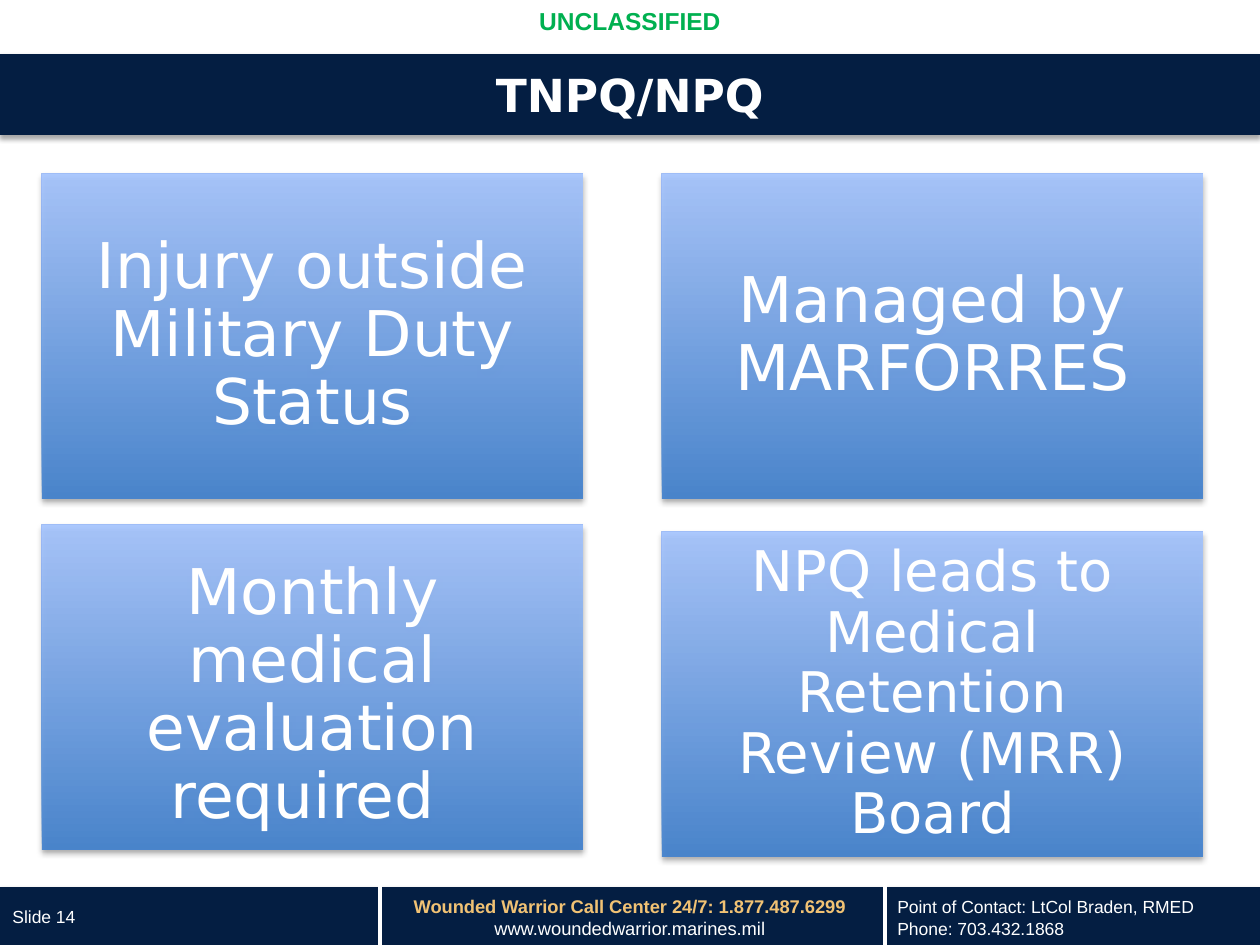
from dataclasses import dataclass

from lxml import etree
from pptx import Presentation, util as u
from pptx.dml.color import RGBColor
from pptx.enum import shapes, text
from pptx.oxml.ns import qn

EMU_PER_PX = 914400 / 126
LEFT, CENTER = text.PP_ALIGN.LEFT, text.PP_ALIGN.CENTER
TOP, MIDDLE = text.MSO_ANCHOR.TOP, text.MSO_ANCHOR.MIDDLE


def px(n):
    return u.Emu(round(n * EMU_PER_PX))


@dataclass(frozen=True)
class Theme:
    navy: str = "041E42"
    white: str = "FFFFFF"
    gold: str = "F1C274"
    green: str = "00B050"
    tile_bottom: str = "3F80CE"
    tile_top: str = "A4C4FF"
    heading_font: str = "DejaVu Sans"
    small_font: str = "Arial"
    title: float = 26
    marking: float = 14
    hotline: float = 10.5
    footer: float = 10
    card: float = 36
    long_card: float = 32


class Deck:
    def __init__(self, theme):
        self.theme = theme
        self.prs = Presentation()
        self.prs.slide_width, self.prs.slide_height = px(1260), px(945)
        self.s = self.prs.slides.add_slide(self.prs.slide_layouts[5])

    def shadow(self, sp):
        sp.shadow.inherit = False
        effects = sp._element.spPr.find(qn("a:effectLst"))
        outer = etree.SubElement(
            effects, qn("a:outerShdw"), blurRad=str(u.Pt(3.1)),
            dist=str(u.Pt(1.8)), dir="5400000", rotWithShape="0")
        color = etree.SubElement(outer, qn("a:srgbClr"), val="000000")
        etree.SubElement(color, qn("a:alpha"), val="35000")

    def paint(self, sp, color):
        sp.fill.solid()
        sp.fill.fore_color.rgb = RGBColor.from_string(color)
        sp.line.fill.background()
        self.shadow(sp)

    def set_text(self, sp, lines, size, font, colors, bold=(False,),
                 align=CENTER, anchor=MIDDLE, wrap=True):
        """Fill a shape with lines; a single colour or weight serves all."""
        tf = sp.text_frame
        tf.text = "\n".join(lines)
        tf.word_wrap, tf.vertical_anchor = wrap, anchor
        tf.auto_size = text.MSO_AUTO_SIZE.NONE
        for i, p in enumerate(tf.paragraphs):
            p.alignment = align
            for r in p.runs:
                r.font.size, r.font.name = u.Pt(size), font
                r.font.bold = bold[i % len(bold)]
                r.font.color.rgb = RGBColor.from_string(colors[i % len(colors)])
        return tf

    def title(self, words, x, y, w, h):
        sp = self.s.shapes.title
        sp.left, sp.top, sp.width, sp.height = map(px, (x, y, w, h))
        self.paint(sp, self.theme.navy)
        self.set_text(sp, [words], self.theme.title, self.theme.heading_font,
                      [self.theme.white], [True])

    def band(self, x, y, w, h):
        sp = self.s.shapes.add_shape(shapes.MSO_SHAPE.RECTANGLE,
                                     *map(px, (x, y, w, h)))
        self.paint(sp, self.theme.navy)

    def label(self, lines, x, y, w, h, size, colors, **style):
        sp = self.s.shapes.add_textbox(*map(px, (x, y, w, h)))
        self.set_text(sp, lines, size, self.theme.small_font, colors, **style)

    def divider(self, x, top, bottom):
        line = self.s.shapes.add_connector(
            shapes.MSO_CONNECTOR.STRAIGHT, *map(px, (x, top, x, bottom)))
        line.line.color.rgb = RGBColor.from_string(self.theme.white)
        line.line.width = u.Pt(2)
        etree.SubElement(line._element.spPr, qn("a:effectLst"))

    def tile(self, words, x, y, w, h, size, drop=0):
        """Gradient card; drop moves its text down within the card."""
        sp = self.s.shapes.add_shape(shapes.MSO_SHAPE.RECTANGLE,
                                     *map(px, (x, y, w, h)))
        sp.fill.gradient()
        sp.fill.gradient_angle = 90
        ends = (self.theme.tile_bottom, self.theme.tile_top)
        for position, (stop, color) in enumerate(zip(sp.fill.gradient_stops, ends)):
            stop.position = position
            stop.color.rgb = RGBColor.from_string(color)
        for color in sp._element.spPr.iter(qn("a:srgbClr")):
            etree.SubElement(color, qn("a:alpha"), val="90000")
        sp.line.fill.background()
        self.shadow(sp)
        tf = self.set_text(sp, [words], size, self.theme.heading_font,
                           [self.theme.white])
        tf.margin_left = tf.margin_right = px(29)
        tf.margin_top, tf.margin_bottom = px(29 + drop), px(29 - drop)
        tf.paragraphs[0].line_spacing = 0.9


def main():
    theme = Theme()
    deck = Deck(theme)

    # Marking and title
    deck.label(["UNCLASSIFIED"], 0, 0, 1260, 43, theme.marking, [theme.green],
               bold=[True], anchor=TOP)
    deck.title("TNPQ/NPQ", 0, 54, 1260, 81)

    # Four cards in two columns
    left, right = 42, 662
    cards = [
        ("Injury outside Military Duty Status", left, 174, theme.card, 0),
        ("Managed by MARFORRES", right, 174, theme.card, 0),
        ("Monthly medical evaluation required ", left, 525, theme.card, 9),
        ("NPQ leads to Medical Retention Review (MRR) Board", right, 532,
         theme.long_card, 0),
    ]
    for words, x, y, size, drop in cards:
        deck.tile(words, x, y, 541, 325, size, drop)

    # Footer
    deck.band(0, 887, 1260, 58)
    for x in (380, 885):
        deck.divider(x, 867, 945)
    deck.label(["Slide 14"], 0, 892, 294, 50, theme.footer, [theme.white],
               align=LEFT)
    deck.label(["Wounded Warrior Call Center 24/7: 1.877.487.6299",
                "www.woundedwarrior.marines.mil"],
               396, 889, 468, 57, theme.hotline, [theme.gold, theme.white],
               bold=[True, False], anchor=TOP, wrap=False)
    deck.label(["Point of Contact: LtCol Braden, RMED", "Phone: 703.432.1868"],
               885, 890, 375, 55, theme.footer, [theme.white], align=LEFT)

    deck.prs.save("out.pptx")


if __name__ == "__main__":
    main()
